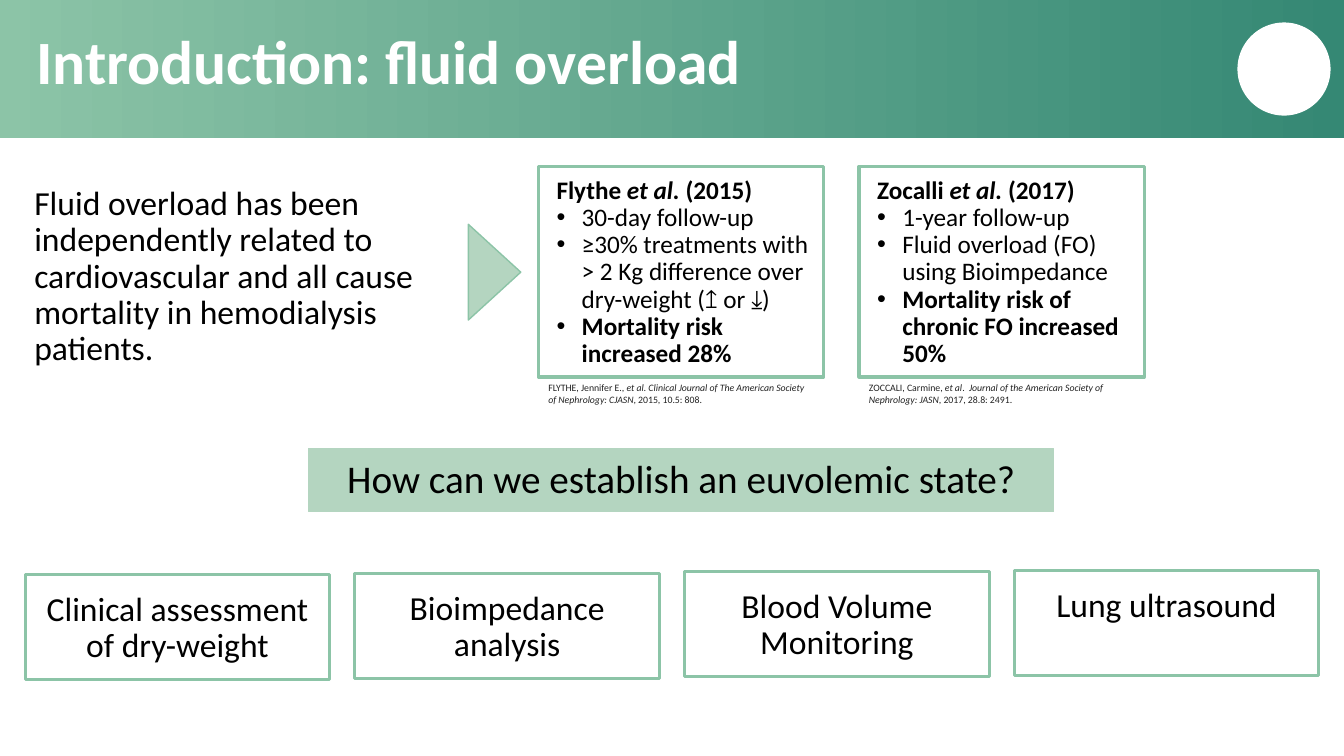
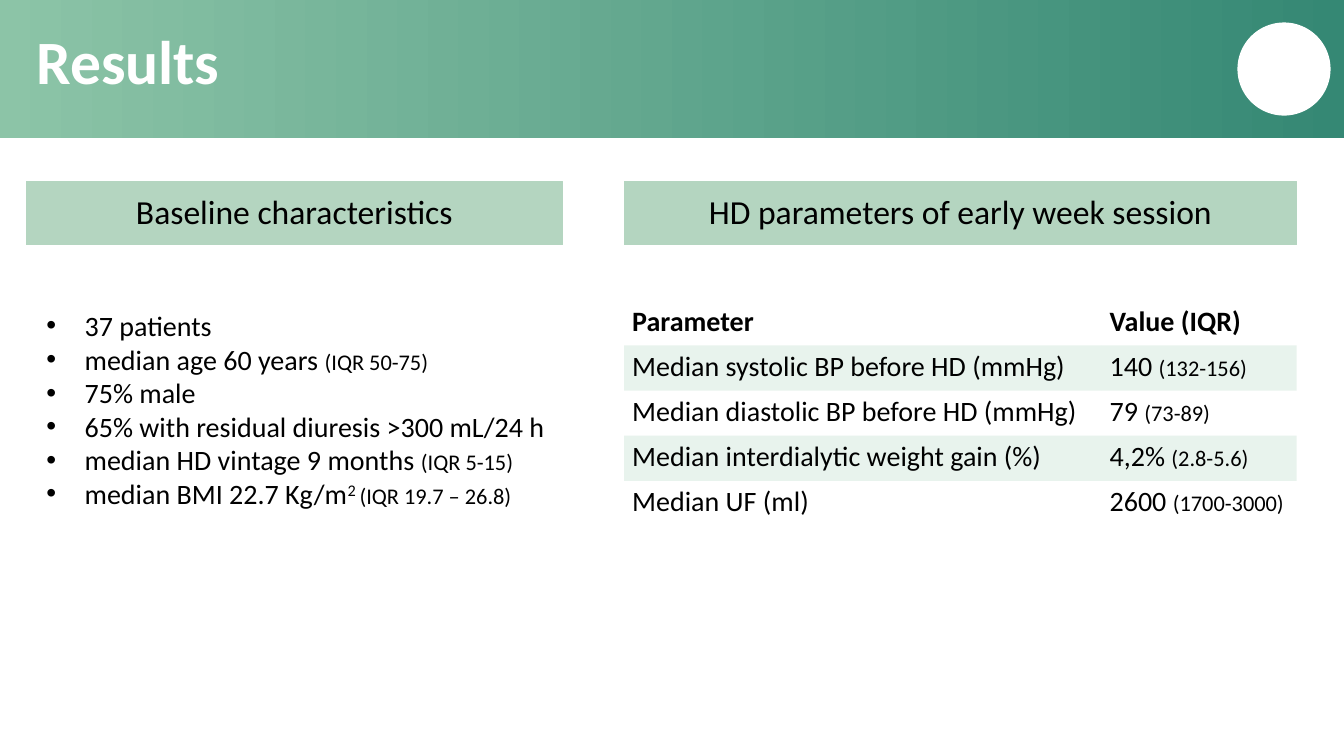
import pptx
import pptx.dml.color
import pptx.enum.shapes
import pptx.enum.text
import pptx.util
from lxml import etree
from pptx.oxml.ns import qn

COLS, ROWS = 13.33, 7.5  # grid of one-inch columns and rows
FONT = "Calibri"
GREEN, DARK_GREEN, PALE_GREEN = "8CC4A7", "358874", "B4D5C0"
BLACK, WHITE, GREY = "000000", "FFFFFF", "222222"
BAND = 1.37
SMALL = 16
NO_STYLE = "{2D5ABB26-0587-4C30-8999-92F81FD0307C}"

SHAPE = pptx.enum.shapes.MSO_SHAPE
ALIGN = pptx.enum.text.PP_ALIGN
ANCHOR = pptx.enum.text.MSO_ANCHOR


def rgb(color):
    return pptx.dml.color.RGBColor.from_string(color)


def grid(*lengths):
    return [pptx.util.Inches(n) for n in lengths]


def place(sp, box):
    sp.left, sp.top, sp.width, sp.height = grid(*box)


def set_margins(area, left, top, right, bottom):
    """Set the insets of a text frame or a table cell."""
    (area.margin_left, area.margin_top,
     area.margin_right, area.margin_bottom) = grid(left, top, right, bottom)


def add_bullet(p, indent):
    pPr = p._p.get_or_add_pPr()
    step = pptx.util.Inches(indent)
    pPr.set("marL", str(step))
    pPr.set("indent", str(-step))
    etree.SubElement(pPr, qn("a:buFont")).set("typeface", "Arial")
    etree.SubElement(pPr, qn("a:buChar")).set("char", "•")


def remove_bullet(p):
    pPr = p._p.get_or_add_pPr()
    pPr.set("marL", "0")
    pPr.set("indent", "0")
    etree.SubElement(pPr, qn("a:buNone"))


def add_runs(p, parts, size, color=BLACK):
    """Parts are strings or (text, flags): b bold, i italic, s small, ^ raised."""
    for part in [parts] if isinstance(parts, str) else parts:
        text, flags = (part, "") if isinstance(part, str) else part
        r = p.add_run()
        r.text = text
        r.font.name = FONT
        r.font.size = pptx.util.Pt(SMALL if "s" in flags else size)
        r.font.color.rgb = rgb(color)
        r.font.bold = "b" in flags
        r.font.italic = "i" in flags
        if "^" in flags:
            r._r.get_or_add_rPr().set("baseline", "30000")


def write(tf, paragraphs, size, color=BLACK, align=ALIGN.LEFT, spacing=0.9,
          anchor=ANCHOR.TOP, bullets_from=None, indent=0.25):
    """Fill a frame; paragraphs from index bullets_from on get a bullet."""
    tf.word_wrap = True
    tf.auto_size = pptx.enum.text.MSO_AUTO_SIZE.NONE
    tf.vertical_anchor = anchor
    for i, parts in enumerate(paragraphs):
        p = tf.add_paragraph() if i else tf.paragraphs[0]
        if bullets_from is not None and i >= bullets_from:
            add_bullet(p, indent)
        else:
            remove_bullet(p)
        p.alignment = align
        p.line_spacing = spacing
        p.space_before = pptx.util.Pt(0)
        add_runs(p, parts, size, color)


def add_shape(s, kind, box, fill=None, line=None, width=1):
    sp = s.shapes.add_shape(kind, *grid(*box))
    sp.shadow.inherit = False
    if fill:
        sp.fill.solid()
        sp.fill.fore_color.rgb = rgb(fill)
    else:
        sp.fill.background()
    if line:
        sp.line.color.rgb = rgb(line)
        sp.line.width = pptx.util.Pt(width)
    else:
        sp.line.fill.background()
    return sp


def style_master(prs, s):
    """Put the band, the disc and the title position on the master."""
    master = prs.slide_master
    band = add_shape(s, SHAPE.RECTANGLE, (0, 0, COLS, BAND))
    band.fill.gradient()
    band.fill.gradient_angle = 0
    for stop, color in zip(band.fill.gradient_stops, (GREEN, DARK_GREEN)):
        stop.color.rgb = rgb(color)
    disc = 0.91
    circle = add_shape(s, SHAPE.OVAL,
                       (12.28, (BAND - disc) / 2, disc, disc), WHITE, WHITE)
    for i, sp in enumerate((band, circle)):
        master.shapes.element.insert(2 + i, sp.element)
    place(master.placeholders[0], (0.26, 0.26, 10.53, 0.95))


def add_slide(prs, title):
    s = prs.slides.add_slide(prs.slide_layouts[1])
    write(s.shapes.title.text_frame, [[(title, "b")]], 44, WHITE)
    return s


def add_banner(s, box, text, size=24):
    sp = add_shape(s, SHAPE.RECTANGLE, box, PALE_GREEN, PALE_GREEN, 0.75)
    write(sp.text_frame, [text], size, align=ALIGN.CENTER, anchor=ANCHOR.MIDDLE)


def add_frame(s, box):
    return add_shape(s, SHAPE.RECTANGLE, box, line=GREEN, width=2.25)


def add_study(s, box, heading, findings, citation):
    """Framed findings with the reference just below the frame."""
    left, top, width, height = box
    tf = add_frame(s, box).text_frame
    set_margins(tf, 0.18, 0.11, 0.11, 0.05)
    write(tf, [heading] + findings, 18, bullets_from=1)
    note = s.shapes.add_textbox(*grid(left, top + height, width, 0.34))
    write(note.text_frame, [citation], 7, GREY, spacing=1)


def add_method(s, box, text):
    tf = add_frame(s, box).text_frame
    set_margins(tf, 0.1, 0.18, 0.1, 0.05)
    write(tf, [text], 24, align=ALIGN.CENTER)


def add_values(s, box, shares, rows):
    """Table with a bold header and every second row tinted."""
    table = s.shapes.add_table(len(rows), len(shares), *grid(*box)).table
    table.first_row = table.horz_banding = False
    table._tbl.tblPr.find(qn("a:tableStyleId")).text = NO_STYLE
    for column, share in zip(table.columns, shares):
        column.width = pptx.util.Inches(box[2] * share)
    for i, row in enumerate(rows):
        for j, parts in enumerate(row):
            cell = table.cell(i, j)
            set_margins(cell, 0.08, 0.04, 0.08, 0.04)
            add_runs(cell.text_frame.paragraphs[0], parts, 20)
            if i % 2:
                cell.fill.solid()
                cell.fill.fore_color.rgb = rgb(GREEN)
                tint = next(cell._tc.tcPr.iter(qn("a:srgbClr")))
                etree.SubElement(tint, qn("a:alpha")).set("val", "20000")
            else:
                cell.fill.background()


def fill_introduction(s):
    body = s.placeholders[1]
    place(body, (0.24, 1.8, 4.46, 1.81))
    write(body.text_frame, [
        "Fluid overload has been independently related to cardiovascular "
        "and all cause mortality in hemodialysis patients."], 24)
    add_banner(s, (3.06, 4.45, 7.39, 0.63),
               "How can we establish an euvolemic state?", 28)
    pointer = add_shape(s, SHAPE.ISOSCELES_TRIANGLE, (4.43, 2.44, 0.95, 0.52),
                        PALE_GREEN, GREEN)
    pointer.rotation = 90

    studies = [
        ([("Flythe ", "b"), ("et al.", "bi"), (" (2015)", "b")],
         ["30-day follow-up",
          "≥30% treatments with > 2 Kg difference over dry-weight (↥ or ⤓)",
          [("Mortality risk increased 28%", "b")]],
         ["FLYTHE, Jennifer E., ",
          ("et al. Clinical Journal of The American Society of "
           "Nephrology: CJASN", "i"),
          ", 2015, 10.5: 808."]),
        ([("Zocalli ", "b"), ("et al.", "bi"), (" (2017)", "b")],
         ["1-year follow-up",
          "Fluid overload (FO) using Bioimpedance",
          [("Mortality risk of chronic FO increased 50%", "b")]],
         ["ZOCCALI, Carmine, ", ("et al", "i"), ".  ",
          ("Journal of the American Society of Nephrology: JASN", "i"),
          ", 2017, 28.8: 2491."]),
    ]
    for i, study in enumerate(studies):
        add_study(s, (5.34 + 3.18 * i, 1.65, 2.83, 2.09), *study)

    methods = [("Clinical assessment of dry-weight", 5.7),
               ("Bioimpedance analysis", 5.69),
               ("Blood Volume Monitoring", 5.67),
               ("Lung ultrasound", 5.66)]
    for i, (text, top) in enumerate(methods):
        add_method(s, (0.25 + 3.27 * i, top, 3.02, 1.04), text)


def fill_results(s):
    add_banner(s, (0.26, 1.8, 5.32, 0.63), "Baseline characteristics")
    body = s.placeholders[1]
    place(body, (0.36, 3.01, 5.83, 2.19))
    write(body.text_frame, [
        "37 patients",
        ["median age 60 years ", ("(IQR 50-75)", "s")],
        "75% male",
        "65% with residual diuresis >300 mL/24 h",
        ["median HD vintage 9 months ", ("(IQR 5-15)", "s")],
        ["median BMI 22.7 Kg/m", ("2 ", "^"), ("(IQR 19.7 – 26.8)", "s")],
    ], 20, spacing=1, bullets_from=0, indent=0.38)

    left, width = 6.19, 6.67
    add_banner(s, (left, 1.8, width, 0.63),
               "HD parameters of early week session")
    add_values(s, (left, 2.98, width, 2.24), (0.71, 0.29), [
        ([("Parameter", "b")], [("Value (IQR)", "b")]),
        ("Median systolic BP before HD (mmHg)", ["140 ", ("(132-156)", "s")]),
        ("Median diastolic BP before HD (mmHg)", ["79 ", ("(73-89)", "s")]),
        ("Median interdialytic weight gain (%)", ["4,2% ", ("(2.8-5.6)", "s")]),
        ("Median UF (ml)", ["2600 ", ("(1700-3000)", "s")]),
    ])


def main():
    prs = pptx.Presentation()
    prs.slide_width, prs.slide_height = grid(COLS, ROWS)
    introduction = add_slide(prs, "Introduction: fluid overload")
    style_master(prs, introduction)
    fill_introduction(introduction)
    fill_results(add_slide(prs, "Results"))
    prs.save("out.pptx")


if __name__ == "__main__":
    main()
